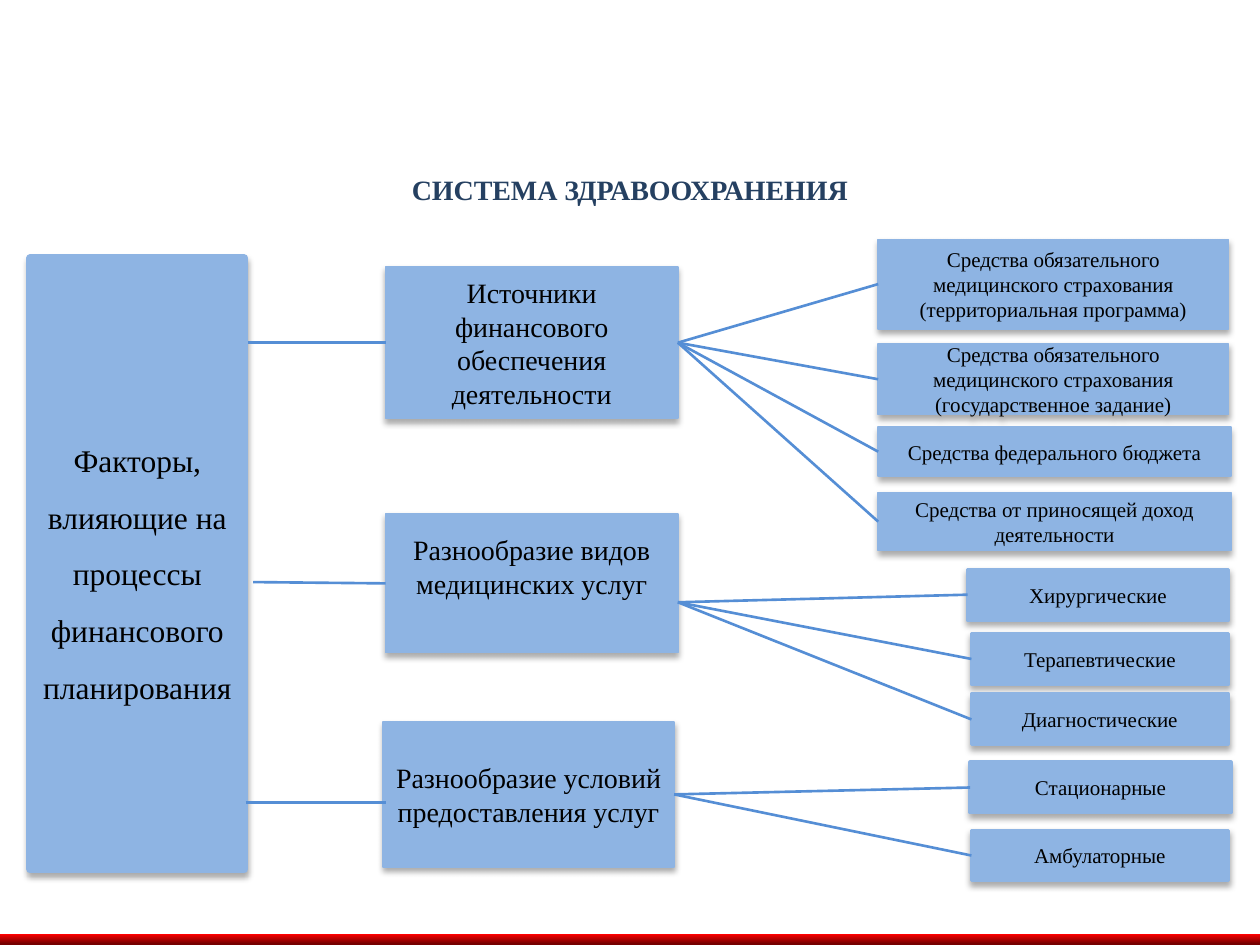
import pptx
import pptx.dml.color
import pptx.enum.shapes
import pptx.enum.text
import pptx.oxml
import pptx.oxml.ns
import pptx.util
from pptx.util import Inches

COLORS = {
    "box": "8EB4E3",
    "line": "558ED5",
    "title": "254061",
    "text": "000000",
    "dark": "760000",
    "red": "FF0000",
}
FONT = "Times New Roman"
NS = pptx.oxml.ns.nsdecls("a")
SHADOW = (
    f'<a:effectLst {NS}><a:outerShdw blurRad="44450" dist="27940" dir="5400000">'
    '<a:srgbClr val="000000"><a:alpha val="32000"/></a:srgbClr>'
    "</a:outerShdw></a:effectLst>"
)
RIGHT, LEFT = 3, 1


def rgb(name):
    return pptx.dml.color.RGBColor.from_string(COLORS[name])


class Deck:
    """Holds the style and the current slide."""

    def __init__(self):
        self.prs = pptx.Presentation()
        self.prs.slide_width = Inches(10)
        self.prs.slide_height = Inches(7.5)
        self.slide = self.prs.slides.add_slide(self.prs.slide_layouts[5])

    def label(self, shape, text, size, color="text", bold=False, gap=None):
        frame = shape.text_frame
        frame.text = text
        frame.word_wrap = True
        frame.vertical_anchor = pptx.enum.text.MSO_ANCHOR.MIDDLE
        for para in frame.paragraphs:
            para.alignment = pptx.enum.text.PP_ALIGN.CENTER
            para.line_spacing = gap
            for run in para.runs:
                run.font.name = FONT
                run.font.size = pptx.util.Pt(size)
                run.font.bold = bold
                run.font.color.rgb = rgb(color)

    def title(self, text, x, y, w, h):
        shape = self.slide.shapes.title
        shape.left, shape.top = Inches(x), Inches(y)
        shape.width, shape.height = Inches(w), Inches(h)
        self.label(shape, text, 16, "title", True)

    def rect(self, x, y, w, h):
        kind = pptx.enum.shapes.MSO_SHAPE.RECTANGLE
        return self.slide.shapes.add_shape(
            kind, Inches(x), Inches(y), Inches(w), Inches(h))

    def strip(self, x, y, w, h):
        """Add the shaded red band at the foot of the slide."""
        shape = self.rect(x, y, w, h)
        shape.shadow.inherit = False
        shape.line.fill.background()
        shape.fill.gradient()
        shape.fill.gradient_angle = 90
        stops = shape.fill.gradient_stops
        for stop, place, color in zip(stops, (0.34, 1), ("dark", "red")):
            stop.position = place
            stop.color.rgb = rgb(color)

    def box(self, text, x, y, w, h, size=12, edge=1, gap=None):
        shape = self.rect(x, y, w, h)
        shape.fill.solid()
        shape.fill.fore_color.rgb = rgb("box")
        shape.line.color.rgb = rgb("box")
        shape.line.width = pptx.util.Pt(edge)
        shape._element.spPr.append(pptx.oxml.parse_xml(SHADOW))
        self.label(shape, text, size, gap=gap)
        return shape

    def link(self, start, end):
        """Join two ends; each is a point or a (shape, side) pair."""
        kind = pptx.enum.shapes.MSO_CONNECTOR.STRAIGHT
        line = self.slide.shapes.add_connector(kind, 0, 0, 0, 0)
        if isinstance(start[0], float):
            line.begin_x, line.begin_y = map(Inches, start)
        else:
            line.begin_connect(*start)
        if isinstance(end[0], float):
            line.end_x, line.end_y = map(Inches, end)
        else:
            line.end_connect(*end)
        line.line.color.rgb = rgb("line")
        line.line.width = pptx.util.Pt(1.5)
        line._element.spPr.append(pptx.oxml.parse_xml(f"<a:effectLst {NS}/>"))

    def fan(self, start, leaves, edge):
        """Add the leaf boxes and a line to each from one start."""
        for leaf in leaves:
            self.link(start, (self.box(*leaf, edge=edge), LEFT))


def main():
    deck = Deck()
    deck.strip(0, 7.41, 10.01, 0.12)
    deck.title("СИСТЕМА ЗДРАВООХРАНЕНИЯ", 0, 1.15, 10, 0.71)

    deck.box("Факторы, влияющие на процессы финансового планирования",
             0.24, 2.05, 1.7, 4.85, size=18, edge=4.5, gap=1.5)
    funds = deck.box("Источники финансового обеспечения деятельности",
                     3.06, 2.12, 2.32, 1.2, size=16)
    care = deck.box("Разнообразие видов\nмедицинских услуг",
                    3.06, 4.08, 2.32, 1.1, size=16)
    care.text_frame.margin_bottom = Inches(0.32)
    terms = deck.box("Разнообразие условий предоставления услуг",
                     3.04, 5.73, 2.31, 1.15, size=16)

    deck.link((1.97, 2.72), (funds, LEFT))
    deck.link((2.01, 4.62), (care, LEFT))
    deck.link((1.95, 6.37), (3.06, 6.37))

    cover = "Средства обязательного медицинского страхования "
    deck.fan((funds, RIGHT), [
        (cover + "(территориальная программа)", 6.97, 1.9, 2.78, 0.71),
        (cover + "(государственное задание)", 6.97, 2.73, 2.78, 0.56),
        ("Средства федерального бюджета", 6.97, 3.39, 2.8, 0.39),
        ("Средства от приносящей доход деятельности", 6.97, 3.91, 2.8, 0.46),
    ], 1)
    deck.fan((5.38, 4.78), [
        ("Хирургические", 7.68, 4.52, 2.07, 0.4),
        ("Терапевтические", 7.71, 5.03, 2.04, 0.4),
        ("Диагностические", 7.71, 5.51, 2.04, 0.4),
    ], 2)
    deck.fan((terms, RIGHT), [
        ("Стационарные", 7.7, 6.05, 2.07, 0.4),
        ("Амбулаторные", 7.71, 6.59, 2.04, 0.4),
    ], 2)

    deck.prs.save("out.pptx")


if __name__ == "__main__":
    main()
